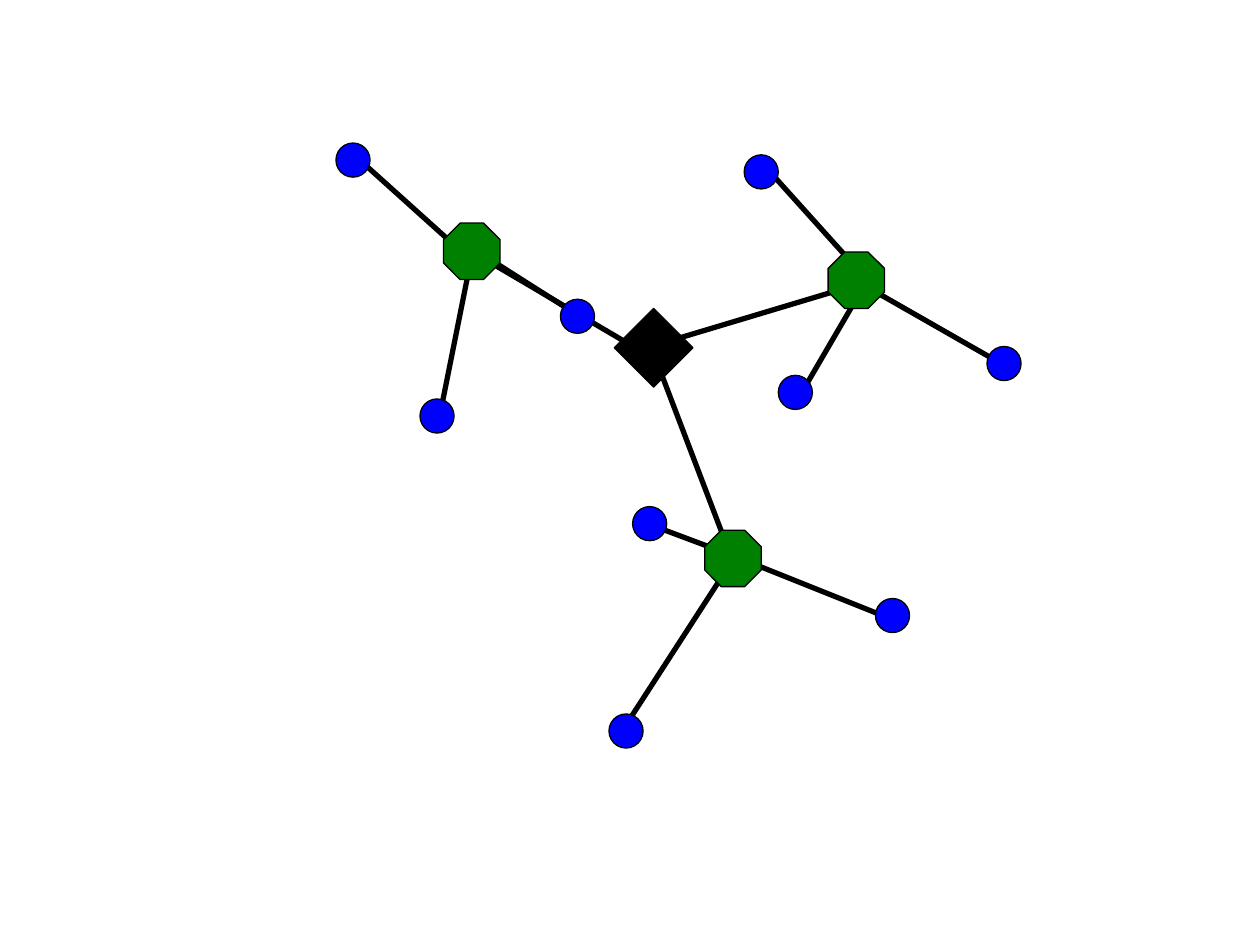
from lxml.etree import SubElement
from pptx import Presentation
from pptx.dml.color import RGBColor
from pptx.enum.shapes import MSO_CONNECTOR as Connector, MSO_SHAPE as Shape
from pptx.oxml.ns import qn
from pptx.util import Emu

COLORS = {"ink": "000000", "hub": "000000", "branch": "008000", "leaf": "0000FF"}
KINDS = {
    "hub": (Shape.DIAMOND, 60),
    "branch": (Shape.OCTAGON, 43),
    "leaf": (Shape.FLOWCHART_CONNECTOR, 26),
}
LINKS = [
    (584, 128, 656, 208), (664, 208, 608, 304), (656, 216, 768, 280),
    (496, 400, 560, 424), (560, 424, 472, 560), (560, 424, 680, 472),
    (272, 120, 352, 192), (352, 184, 440, 240), (360, 192, 336, 312),
    (360, 192, 496, 272), (656, 216, 496, 264), (560, 432, 496, 264),
]
NODES = {
    "hub": [(468, 235)],
    "branch": [(537, 404), (631, 192), (338, 170)],
    "leaf": [
        (320, 304), (427, 228), (256, 109),
        (482, 386), (464, 544), (667, 456),
        (752, 264), (567, 118), (593, 286),
    ],
}


def px(count):
    return Emu(count * 9525)


class NetworkDrawing:
    def __init__(self, page):
        self.page = page
        self.link_width = px(4)
        self.outline_width = px(1)

    def color(self, name):
        return RGBColor.from_string(COLORS[name])

    def stroke(self, line, width):
        line.color.rgb = self.color("ink")
        line.width = width

    def link(self, *ends):
        connector = self.page.shapes.add_connector(Connector.STRAIGHT, *map(px, ends))
        self.stroke(connector.line, self.link_width)
        SubElement(connector._element.spPr, qn("a:effectLst"))

    def node(self, kind, left, top):
        preset, size = KINDS[kind]
        shape = self.page.shapes.add_shape(preset, px(left), px(top), px(size), px(size))
        shape.shadow.inherit = False
        shape.fill.solid()
        shape.fill.fore_color.rgb = self.color(kind)
        self.stroke(shape.line, self.outline_width)


def main():
    deck = Presentation()
    deck.slide_width, deck.slide_height = px(960), px(720)
    drawing = NetworkDrawing(deck.slides.add_slide(deck.slide_layouts[6]))
    for ends in LINKS:
        drawing.link(*ends)
    for kind, places in NODES.items():
        for left, top in places:
            drawing.node(kind, left, top)
    deck.save("out.pptx")


if __name__ == "__main__":
    main()
